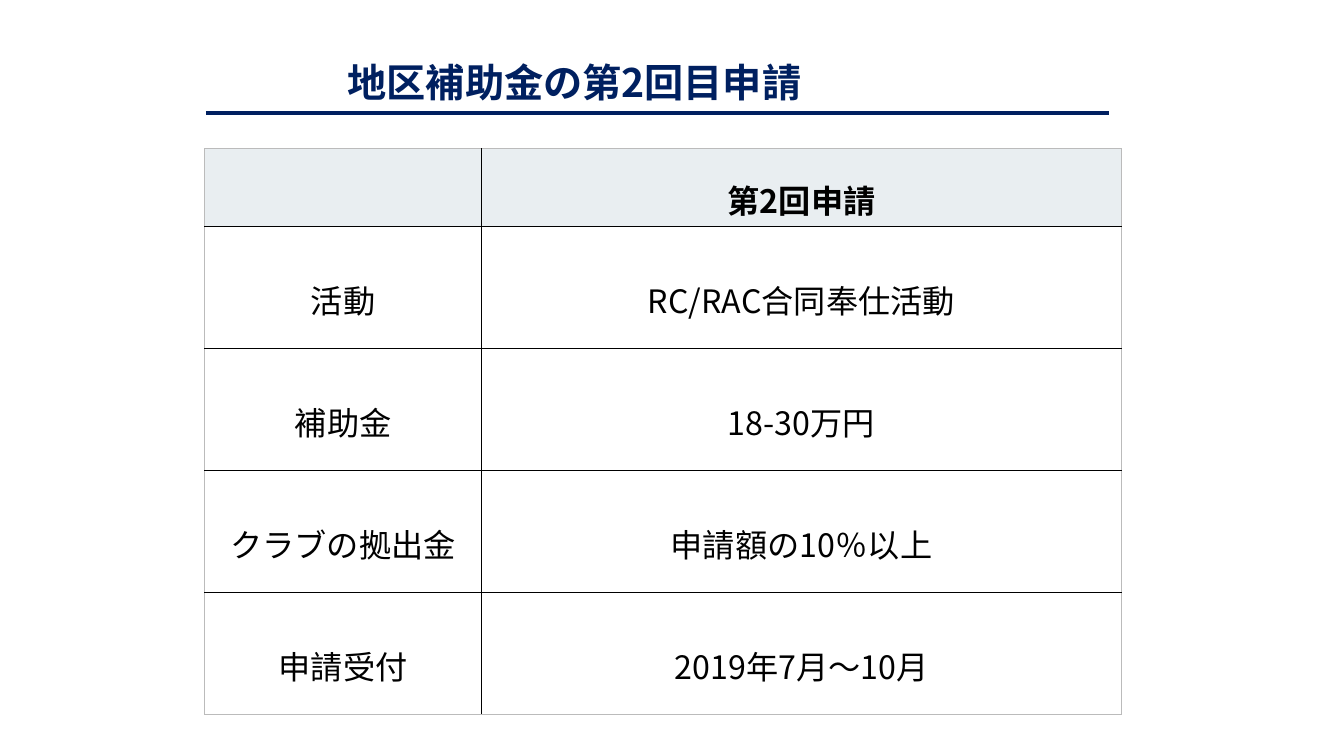
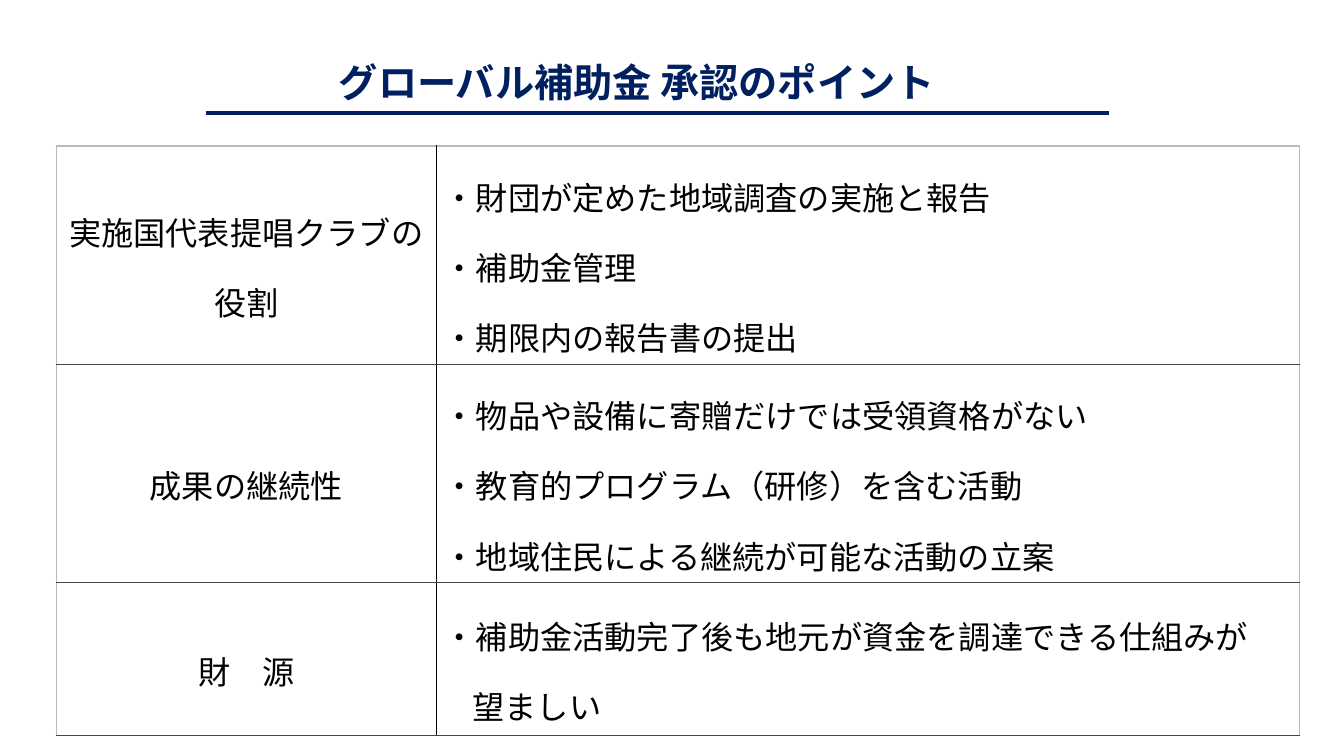
from dataclasses import dataclass
from typing import Optional

from lxml.etree import SubElement
from pptx import Presentation
from pptx.dml.color import RGBColor
from pptx.enum.text import MSO_ANCHOR, PP_ALIGN
from pptx.oxml.ns import qn
from pptx.util import Cm, Pt

NAVY = RGBColor(0x00, 0x20, 0x60)
BLACK = RGBColor(0x00, 0x00, 0x00)
CHARCOAL = RGBColor(0x46, 0x46, 0x4A)
GREY = RGBColor(0xBB, 0xBB, 0xBB)
PALE = RGBColor(0xE9, 0xEE, 0xF1)

FONT = "Noto Sans CJK JP"
MARGIN_X = Cm(0.18)
MARGIN_Y = Cm(0.1)


@dataclass(frozen=True)
class Line:
    text: str
    indent: float = 0


@dataclass(frozen=True)
class TextStyle:
    size: float
    colour: RGBColor
    bold: bool = False
    spacing: float = 1.0
    alignment: PP_ALIGN = PP_ALIGN.LEFT
    anchor: MSO_ANCHOR = MSO_ANCHOR.MIDDLE


@dataclass(frozen=True)
class Border:
    colour: RGBColor
    width: float = 1


@dataclass(frozen=True)
class Grid:
    left: float
    top: float
    columns: tuple[float, ...]
    heights: tuple[float, ...]
    rows: tuple[tuple[tuple[Line, ...], ...], ...]
    styles: tuple[TextStyle, ...]
    outer: Optional[Border]
    row_line: Border
    bottom: Border
    header: Optional[TextStyle] = None


TITLE = TextStyle(28, NAVY, bold=True, anchor=MSO_ANCHOR.TOP)
CENTRED = TextStyle(23, BLACK, spacing=1.5, alignment=PP_ALIGN.CENTER)
LISTED = TextStyle(23, BLACK, spacing=1.5)
HEADER = TextStyle(23, BLACK, bold=True, spacing=1.5, alignment=PP_ALIGN.CENTER)

FRAME = Border(GREY)
INNER = Border(BLACK)
DIVIDER = Border(CHARCOAL)
TITLE_RULE = Border(NAVY, 3)


def title_grid(text: str, indent: float) -> Grid:
    return Grid(
        left=5.19,
        top=1.22,
        columns=(22.75,),
        heights=(1.37,),
        rows=(((Line(text, indent),),),),
        styles=(TITLE,),
        outer=None,
        row_line=TITLE_RULE,
        bottom=TITLE_RULE,
    )


APPLICATION = Grid(
    left=5.16,
    top=3.75,
    columns=(6.98, 16.12),
    heights=(1.37,) + (3.07,) * 4,
    rows=(
        ((), (Line("第2回申請"),)),
        ((Line("活動"),), (Line("RC/RAC合同奉仕活動"),)),
        ((Line("補助金"),), (Line("18-30万円"),)),
        ((Line("クラブの拠出金"),), (Line("申請額の10％以上"),)),
        ((Line("申請受付"),), (Line("2019年7月～10月"),)),
    ),
    styles=(CENTRED, CENTRED),
    outer=FRAME,
    row_line=INNER,
    bottom=FRAME,
    header=HEADER,
)

APPROVAL = Grid(
    left=1.42,
    top=3.68,
    columns=(9.58, 21.74),
    heights=(4.98, 4.98, 3.86),
    rows=(
        (
            (Line("実施国代表提唱クラブの役割"),),
            (
                Line("・財団が定めた地域調査の実施と報告"),
                Line("・補助金管理"),
                Line("・期限内の報告書の提出"),
            ),
        ),
        (
            (Line("成果の継続性"),),
            (
                Line("・物品や設備に寄贈だけでは受領資格がない"),
                Line("・教育的プログラム（研修）を含む活動"),
                Line("・地域住民による継続が可能な活動の立案"),
            ),
        ),
        (
            (Line("財　源"),),
            (
                Line("・補助金活動完了後も地元が資金を調達できる仕組みが"),
                Line("望ましい", 0.73),
            ),
        ),
    ),
    styles=(CENTRED, LISTED),
    outer=FRAME,
    row_line=DIVIDER,
    bottom=DIVIDER,
)

PAGES = (
    (title_grid("地区補助金の第2回目申請", 3.39), APPLICATION),
    (title_grid("グローバル補助金 承認のポイント", 3.17), APPROVAL),
)


def add_span(para, text: str, style: TextStyle) -> None:
    span = para.add_run()
    span.text = text
    span.font.size = Pt(style.size)
    span.font.bold = style.bold
    span.font.color.rgb = style.colour
    span.font.name = FONT
    SubElement(span.font._element, qn("a:ea"), typeface=FONT)


def add_border(cell, side: str, border: Optional[Border]) -> None:
    line = SubElement(cell._tc.get_or_add_tcPr(), qn(f"a:ln{side}"))
    if border is None:
        SubElement(line, qn("a:noFill"))
        return
    line.set("w", str(Pt(border.width)))
    fill = SubElement(line, qn("a:solidFill"))
    SubElement(fill, qn("a:srgbClr"), val=str(border.colour))


def fill_cell(cell, lines: tuple[Line, ...], style: TextStyle) -> None:
    cell.vertical_anchor = style.anchor
    cell.margin_left = cell.margin_right = MARGIN_X
    cell.margin_top = cell.margin_bottom = MARGIN_Y
    frame = cell.text_frame
    for index, line in enumerate(lines):
        para = frame.add_paragraph() if index else frame.paragraphs[0]
        para.alignment = style.alignment
        para.line_spacing = style.spacing
        if line.indent:
            para._p.get_or_add_pPr().set("marL", str(Cm(line.indent)))
        add_span(para, line.text, style)


def add_grid(slide, grid: Grid) -> None:
    last_row, last_column = len(grid.heights) - 1, len(grid.columns) - 1
    table = slide.shapes.add_table(
        last_row + 1,
        last_column + 1,
        Cm(grid.left),
        Cm(grid.top),
        Cm(sum(grid.columns)),
        Cm(sum(grid.heights)),
    ).table
    table.first_row = grid.header is not None
    table.horz_banding = False
    for column, width in zip(table.columns, grid.columns):
        column.width = Cm(width)
    for row, height in zip(table.rows, grid.heights):
        row.height = Cm(height)

    for row_index, row in enumerate(grid.rows):
        header = grid.header if row_index == 0 else None
        for column_index, lines in enumerate(row):
            cell = table.cell(row_index, column_index)
            fill_cell(cell, lines, header or grid.styles[column_index])
            add_border(cell, "L", INNER if column_index else grid.outer)
            add_border(cell, "R", INNER if column_index < last_column else grid.outer)
            add_border(cell, "T", grid.row_line if row_index else grid.outer)
            add_border(cell, "B", grid.row_line if row_index < last_row else grid.bottom)
            if header:
                cell.fill.solid()
                cell.fill.fore_color.rgb = PALE
            else:
                cell.fill.background()


def main() -> None:
    deck = Presentation()
    deck.slide_width, deck.slide_height = Cm(33.87), Cm(19.05)
    for grids in PAGES:
        slide = deck.slides.add_slide(deck.slide_layouts[6])
        for grid in grids:
            add_grid(slide, grid)
    deck.save("out.pptx")


if __name__ == "__main__":
    main()
